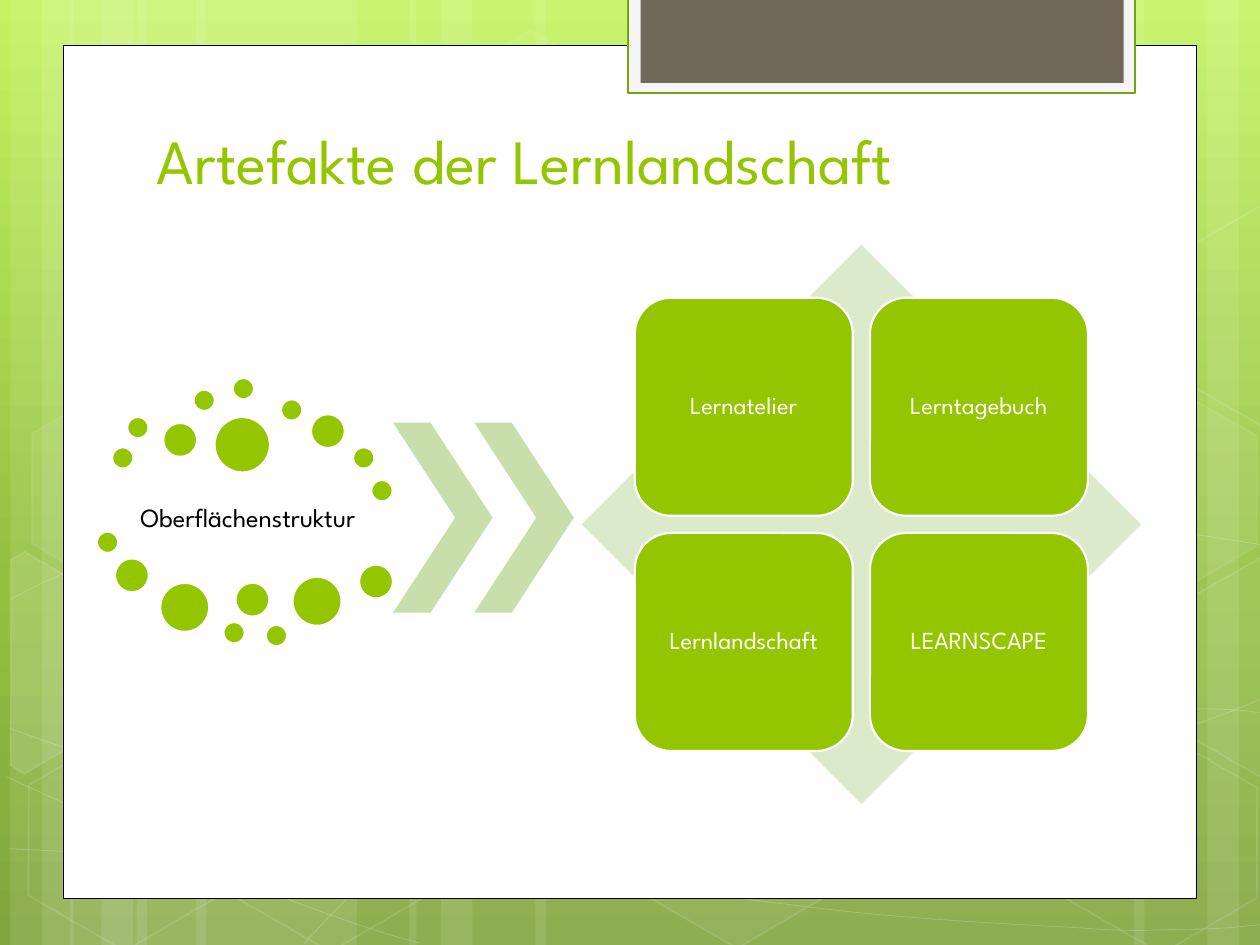
from copy import deepcopy
from math import cos, radians, sin

from lxml import etree
from pptx import Presentation
from pptx.dml.color import RGBColor
from pptx.enum.shapes import MSO_SHAPE
from pptx.enum.text import MSO_ANCHOR, PP_ALIGN
from pptx.oxml.ns import qn
from pptx.util import Pt

RECT = MSO_SHAPE.RECTANGLE
OVAL = MSO_SHAPE.OVAL
HEXAGON = MSO_SHAPE.HEXAGON
CHEVRON = MSO_SHAPE.CHEVRON
DIAMOND = MSO_SHAPE.DIAMOND
ROUNDED = MSO_SHAPE.ROUNDED_RECTANGLE
CENTER, LEFT = PP_ALIGN.CENTER, PP_ALIGN.LEFT
MIDDLE, BOTTOM = MSO_ANCHOR.MIDDLE, MSO_ANCHOR.BOTTOM

FONT = "League Spartan"
GREEN, WHITE, BLACK = "94C600", "FFFFFF", "000000"
SLIDE_W, SLIDE_H = 720, 540
TILT = 30
SKY = [(0, "C3F35F"), (0.62, "93BF3F"), (1, "81A53E")]

STRIPES = [(78, 126), (6, 36), (24, 60), (112, 126), (40, 36), (58, 60),
           (528, 126), (690, 36), (648, 60), (306, 222), (234, 36), (252, 60)]
# Each wave: a start point, then three points for every Bezier segment
WAVES = [
    [(5, 485), (44, 487), (83, 489), (137, 488), (191, 487), (258, 486), (330, 479),
     (402, 472), (504, 458), (570, 444), (636, 431), (703, 409), (725, 397)],
    [(5, 343), (26, 332), (47, 321), (87, 310), (128, 299), (186, 284), (250, 279),
     (314, 274), (392, 273), (471, 279), (550, 284), (695, 307), (725, 312)],
    [(4, 444), (91, 484), (178, 523), (240, 539)],
    [(5, 416), (27, 424), (50, 432), (92, 444), (134, 454), (197, 472), (257, 485),
     (317, 497), (392, 510), (452, 517), (512, 525), (576, 528), (614, 530),
     (652, 533), (662, 531), (680, 531), (699, 531), (712, 529), (725, 528)],
    [(174, 539), (187, 525), (200, 510), (217, 498), (235, 485), (259, 470), (279, 460),
     (300, 450), (312, 446), (338, 438), (364, 431), (413, 421), (438, 416),
     (464, 411), (467, 411), (490, 410), (512, 408), (547, 405), (572, 405),
     (597, 404), (638, 405), (638, 405), (654, 405), (670, 405), (686, 405),
     (699, 405), (711, 406), (718, 407), (724, 407), (722, 407), (724, 408)],
]
# left, top, fill opacity, line opacity (percent)
HEXAGONS = [(240.5, 26, 4, 8), (358, 424, 6, 12), (8, 425.5, 0, 12), (10, 224.5, 7, 8),
            (125.5, 426, 0, 12), (542, 326, 10, 12), (600.5, 427, 0, 12), (600.5, 226, 7, 8)]
# Hexagons cut off by the slide edge, with the centre they are tilted around
CUT_LEFT = [(6, 320), (14, 315), (69, 347), (68, 410), (14, 442), (6, 437)]
CUT_LEFT_CENTRE = (25.9, 385.2)
CUT_RIGHT = [(667, 349), (721, 318), (726, 321), (726, 441), (721, 444), (667, 413)]
CUT_RIGHT_CENTRE = (709.2, 374.4)
CUT_RIGHT_STEP = 201
# bubble diameter: offsets within the cloud
BUBBLES = {
    12.2: [(8.7, 39.6), (17.3, 22.3), (55.2, 6.7), (77.6, 0), (105.2, 12.2), (146.4, 39.6),
           (156.8, 58.3), (0, 87.8), (72.3, 139.5), (96.5, 141.1)],
    19.4: [(37.9, 25.7), (122.3, 20.7), (10.3, 103.1), (79.2, 117), (149.8, 106.6)],
    28: [(36.2, 117.1), (111.8, 113.6)],
    31.7: [(67.2, 22.3)],
}
ARTEFACTS = ["Lernatelier", "Lerntagebuch", "Lernlandschaft", "LEARNSCAPE"]


def rgb(value):
    return RGBColor.from_string(value)


def set_opacity(parent, percent):
    color = parent.find(qn("a:solidFill")).find(qn("a:srgbClr"))
    etree.SubElement(color, qn("a:alpha")).set("val", str(percent * 1000))


def paint(shape, fill=None, line=None, width=1.25, fill_opacity=100, line_opacity=100):
    shape.shadow.inherit = False
    properties = shape._element.spPr
    if fill:
        shape.fill.solid()
        shape.fill.fore_color.rgb = rgb(fill)
        if fill_opacity < 100:
            set_opacity(properties, fill_opacity)
    else:
        shape.fill.background()
    if line:
        shape.line.color.rgb = rgb(line)
        shape.line.width = Pt(width)
        if line_opacity < 100:
            set_opacity(properties.find(qn("a:ln")), line_opacity)
    else:
        shape.line.fill.background()


def add_shape(slide, kind, box, **style):
    shape = slide.shapes.add_shape(kind, *map(Pt, box))
    paint(shape, **style)
    return shape


def add_outline(slide, points, close, **style):
    points = [(Pt(x), Pt(y)) for x, y in points]
    builder = slide.shapes.build_freeform(*points[0])
    builder.add_line_segments(points[1:], close=close)
    outline = builder.convert_to_shape()
    paint(outline, **style)
    return outline


def add_wave(slide, points):
    """Draw an outline and turn every three of its lines into one Bezier curve."""
    wave = add_outline(slide, points, False, line=WHITE, width=0.5, line_opacity=20)
    lines = list(wave._element.iter(qn("a:lnTo")))
    for start in range(0, len(lines), 3):
        curve = etree.Element(qn("a:cubicBezTo"))
        lines[start].addprevious(curve)
        for line in lines[start:start + 3]:
            curve.append(line[0])
            line.getparent().remove(line)


def add_cut_hexagon(slide, points, centre, **style):
    """Lay the outline level around its centre, then tilt the shape."""
    c, s = cos(radians(TILT)), sin(radians(TILT))
    offsets = [(x - centre[0], y - centre[1]) for x, y in points]
    level = [(centre[0] + x * c + y * s, centre[1] - x * s + y * c) for x, y in offsets]
    add_outline(slide, level, True, line=WHITE, width=1, line_opacity=12, **style).rotation = TILT


def write(shape, text, size, color, align=CENTER, anchor=MIDDLE, insets=(4.5, 4.5), spacing=0.9):
    frame = shape.text_frame
    frame.word_wrap = True
    frame.vertical_anchor = anchor
    frame.margin_left = frame.margin_right = Pt(insets[0])
    frame.margin_top = frame.margin_bottom = Pt(insets[1])
    paragraph = frame.paragraphs[0]
    paragraph.alignment = align
    paragraph.line_spacing = spacing
    run = paragraph.add_run()
    run.text = text
    run.font.name, run.font.size = FONT, Pt(size)
    run.font.color.rgb = rgb(color)


def add_sky(slide):
    fill = slide.background.fill
    fill.gradient()
    fill.gradient_angle = 270
    stop_list = slide._element.find(".//" + qn("a:gsLst"))
    stop_list.append(deepcopy(stop_list[-1]))
    for stop, (position, color) in zip(fill.gradient_stops, SKY):
        stop.position = position
        stop.color.rgb = rgb(color)


def add_backdrop(slide):
    add_sky(slide)
    for left, width in STRIPES:
        add_shape(slide, RECT, (left, 0, width, SLIDE_H), fill=WHITE, fill_opacity=10)
    for wave in WAVES:
        add_wave(slide, wave)
    for left, top, fill_opacity, line_opacity in HEXAGONS:
        hexagon = add_shape(slide, HEXAGON, (left, top, 126, 109.4),
                            fill=WHITE if fill_opacity else None, fill_opacity=fill_opacity,
                            line=WHITE, width=1, line_opacity=line_opacity)
        hexagon.adjustments[0] = 0.285
        hexagon.rotation = TILT
    add_cut_hexagon(slide, CUT_LEFT, CUT_LEFT_CENTRE, fill=WHITE, fill_opacity=10)
    add_cut_hexagon(slide, CUT_RIGHT, CUT_RIGHT_CENTRE, fill=WHITE, fill_opacity=4)
    *upper, upper_centre = [(x, y - CUT_RIGHT_STEP) for x, y in CUT_RIGHT + [CUT_RIGHT_CENTRE]]
    add_cut_hexagon(slide, upper, upper_centre)


def add_panel(slide, left, top, width, height):
    add_shape(slide, RECT, (left, top, width, height), fill=WHITE, line=BLACK, width=0.5)
    tab_left = left + 323
    add_shape(slide, RECT, (tab_left, -1.4, 289.6, 54.6), fill="F5F5F5", line="74A510")
    add_shape(slide, RECT, (tab_left + 7.1, -1.4, 276, 48.8), fill="71685A")


def add_title(slide, *box):
    title = slide.shapes.add_textbox(*map(Pt, box))
    write(title, "Artefakte der Lernlandschaft", 36, GREEN, LEFT, BOTTOM, (7.2, 3.6), 1)


def add_cloud(slide, left, top, width):
    label = slide.shapes.add_textbox(*map(Pt, (left + 8.9, top + 55.1, width - 14.5, 51.1)))
    write(label, "Oberflächenstruktur", 15, BLACK, insets=(1.4, 1.4))
    for diameter, offsets in BUBBLES.items():
        for x, y in offsets:
            add_shape(slide, OVAL, (left + x, top + y, diameter, diameter),
                      fill=GREEN, line=WHITE)


def add_chevrons(slide, left, top, width, height, step=46.4):
    for index in range(2):
        chevron = add_shape(slide, CHEVRON, (left + index * step, top, width, height),
                            fill="C8DFAB")
        chevron.adjustments[0] = 0.623


def add_artefacts(slide, left, top, size, card=124.6, gap=9.8):
    add_shape(slide, DIAMOND, (left, top, size, size), fill="DCEACC")
    margin = (size - 2 * card - gap) / 2
    for index, name in enumerate(ARTEFACTS):
        row, column = divmod(index, 2)
        box = (left + margin + column * (card + gap), top + margin + row * (card + gap),
               card, card)
        write(add_shape(slide, ROUNDED, box, fill=GREEN, line=WHITE), name, 14, WHITE)


def main():
    deck = Presentation()
    deck.slide_width, deck.slide_height = Pt(SLIDE_W), Pt(SLIDE_H)
    slide = deck.slides.add_slide(deck.slide_layouts[6])
    add_backdrop(slide)
    add_panel(slide, 36, 26, 648, 487.2)
    add_cloud(slide, 55.4, 216, 169.3)
    add_chevrons(slide, 224.6, 241.6, 56.9, 108.5)
    add_title(slide, 82.4, 26, 553, 90)
    add_artefacts(slide, 332.4, 139.8, 319.7)
    deck.save("out.pptx")


if __name__ == "__main__":
    main()
